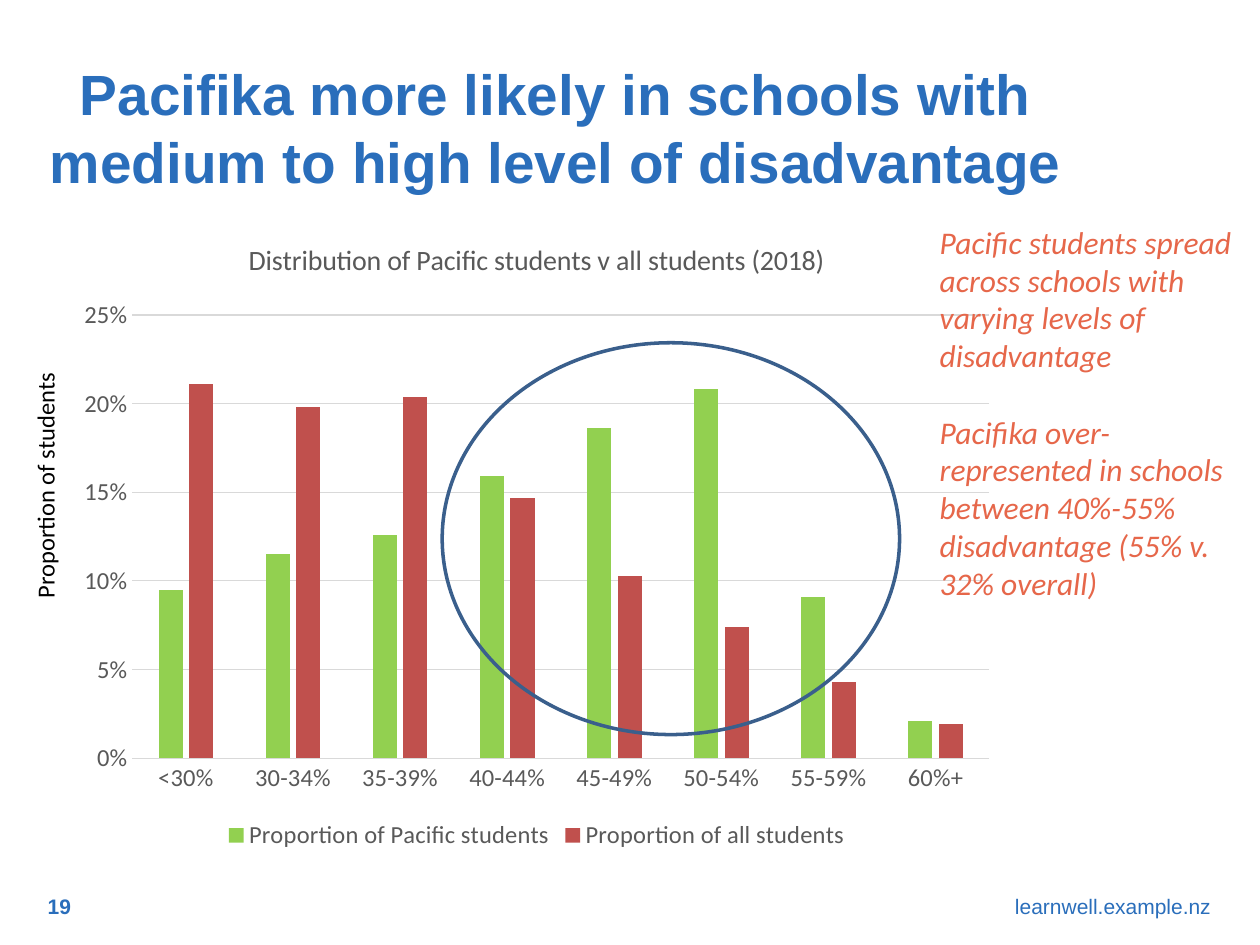
from dataclasses import dataclass

from pptx import Presentation
from pptx.chart.data import CategoryChartData
from pptx.dml.color import RGBColor
from pptx.enum.chart import XL_CHART_TYPE, XL_LEGEND_POSITION, XL_TICK_MARK
from pptx.enum.shapes import MSO_SHAPE
from pptx.enum.text import MSO_ANCHOR, PP_ALIGN
from pptx.util import Inches, Pt


@dataclass(frozen=True)
class Theme:
    heading_font: str = "Arial"
    body_font: str = "Calibri"
    blue: str = "2A6EBB"
    orange: str = "E6674A"
    ring: str = "3A5F8C"
    black: str = "000000"
    grey: str = "595959"
    rule: str = "D9D9D9"
    pacific: str = "92D050"
    everyone: str = "C0504D"
    title: float = 32.4
    body: float = 18
    chart_title: float = 16
    label: float = 14
    footer: float = 12


def rgb(value):
    return RGBColor.from_string(value)


def style_font(font, name, size, color, bold=False, italic=False):
    font.name, font.size = name, Pt(size)
    font.bold, font.italic = bold, italic
    font.color.rgb = rgb(color)


class SlideBuilder:
    def __init__(self, slide, theme):
        self.s, self.theme = slide, theme

    def text(self, box, paragraphs, font, size, color, bold=False, italic=False,
             align=PP_ALIGN.LEFT, anchor=MSO_ANCHOR.TOP, gap=0, vert=None):
        sp = self.s.shapes.add_textbox(*map(Inches, box))
        tf = sp.text_frame
        tf.word_wrap = True
        tf.vertical_anchor = anchor
        if vert:
            tf._txBody.bodyPr.set("vert", vert)
        for i, content in enumerate(paragraphs):
            p = tf.add_paragraph() if i else tf.paragraphs[0]
            p.alignment = align
            p.space_before = Pt(gap if i else 0)
            r = p.add_run()
            r.text = content
            style_font(r.font, font, size, color, bold, italic)

    def column_chart(self, box, title, categories, series):
        """Series maps each name to its colour and values."""
        t = self.theme
        data = CategoryChartData(number_format="0%")
        data.categories = categories
        for name, (_, values) in series.items():
            data.add_series(name, values)
        chart = self.s.shapes.add_chart(
            XL_CHART_TYPE.COLUMN_CLUSTERED, *map(Inches, box), data).chart
        style_font(chart.font, t.body_font, t.label, t.black)

        chart.has_title = True
        r = chart.chart_title.text_frame.paragraphs[0].add_run()
        r.text = title
        style_font(r.font, t.body_font, t.chart_title, t.grey)

        chart.has_legend = True
        chart.legend.position = XL_LEGEND_POSITION.BOTTOM
        chart.legend.include_in_layout = False
        style_font(chart.legend.font, t.body_font, t.label, t.grey)

        plot = chart.plots[0]
        plot.gap_width, plot.overlap = 219, -27
        plot.vary_by_categories = False
        for column, (color, _) in zip(plot.series, series.values()):
            column.format.fill.solid()
            column.format.fill.fore_color.rgb = rgb(color)
            column.invert_if_negative = False

        cat, val = chart.category_axis, chart.value_axis
        for axis in (cat, val):
            axis.major_tick_mark = axis.minor_tick_mark = XL_TICK_MARK.NONE
            style_font(axis.tick_labels.font, t.body_font, t.label, t.grey)
        cat.has_major_gridlines = False
        val.has_major_gridlines = True
        for line in (cat.format.line, val.major_gridlines.format.line):
            line.color.rgb = rgb(t.rule)
            line.width = Pt(0.75)
        val.format.line.fill.background()
        val.minimum_scale, val.maximum_scale, val.major_unit = 0, 0.25, 0.05
        val.tick_labels.number_format = "0%"
        val.tick_labels.number_format_is_linked = False

    def ring(self, box):
        sp = self.s.shapes.add_shape(MSO_SHAPE.OVAL, *map(Inches, box))
        sp.shadow.inherit = False
        sp.fill.background()
        sp.line.color.rgb = rgb(self.theme.ring)
        sp.line.width = Pt(2)


def main():
    t = Theme()
    prs = Presentation()
    prs.slide_width, prs.slide_height = Inches(10), Inches(7.5)
    b = SlideBuilder(prs.slides.add_slide(prs.slide_layouts[6]), t)

    b.text((7.44, 7.04, 2.27, 0.3), ["learnwell.example.nz"],
           t.heading_font, t.footer, t.blue, align=PP_ALIGN.RIGHT)
    b.column_chart(
        (0.52, 1.72, 7.48, 5.07),
        "Distribution of Pacific students v all students (2018)",
        ["<30%", "30-34%", "35-39%", "40-44%", "45-49%", "50-54%", "55-59%", "60%+"],
        {
            "Proportion of Pacific students": (
                t.pacific, [0.095, 0.115, 0.126, 0.159, 0.186, 0.208, 0.091, 0.021]),
            "Proportion of all students": (
                t.everyone, [0.211, 0.198, 0.204, 0.147, 0.103, 0.074, 0.043, 0.019]),
        })
    b.text((0.28, 0.61, 8.26, 0.8),
           ["Pacifika more likely in schools with medium to high level of disadvantage"],
           t.heading_font, t.title, t.blue, bold=True,
           align=PP_ALIGN.CENTER, anchor=MSO_ANCHOR.MIDDLE)
    b.text((0.28, 7.09, 0.87, 0.2), ["19"], t.heading_font, t.footer, t.blue,
           bold=True, anchor=MSO_ANCHOR.MIDDLE)
    b.text((7.36, 1.72, 2.55, 3.13),
           ["Pacific students spread across schools with varying levels of disadvantage",
            "Pacifika over-represented in schools between 40%-55% disadvantage "
            "(55% v. 32% overall)"],
           t.body_font, t.body, t.orange, italic=True, gap=22)
    b.ring((3.51, 2.72, 3.63, 3.11))
    b.text((0.19, 2.21, 0.44, 2.64), ["Proportion of students"],
           t.body_font, t.label, t.black, vert="vert270")
    prs.save("out.pptx")


if __name__ == "__main__":
    main()
